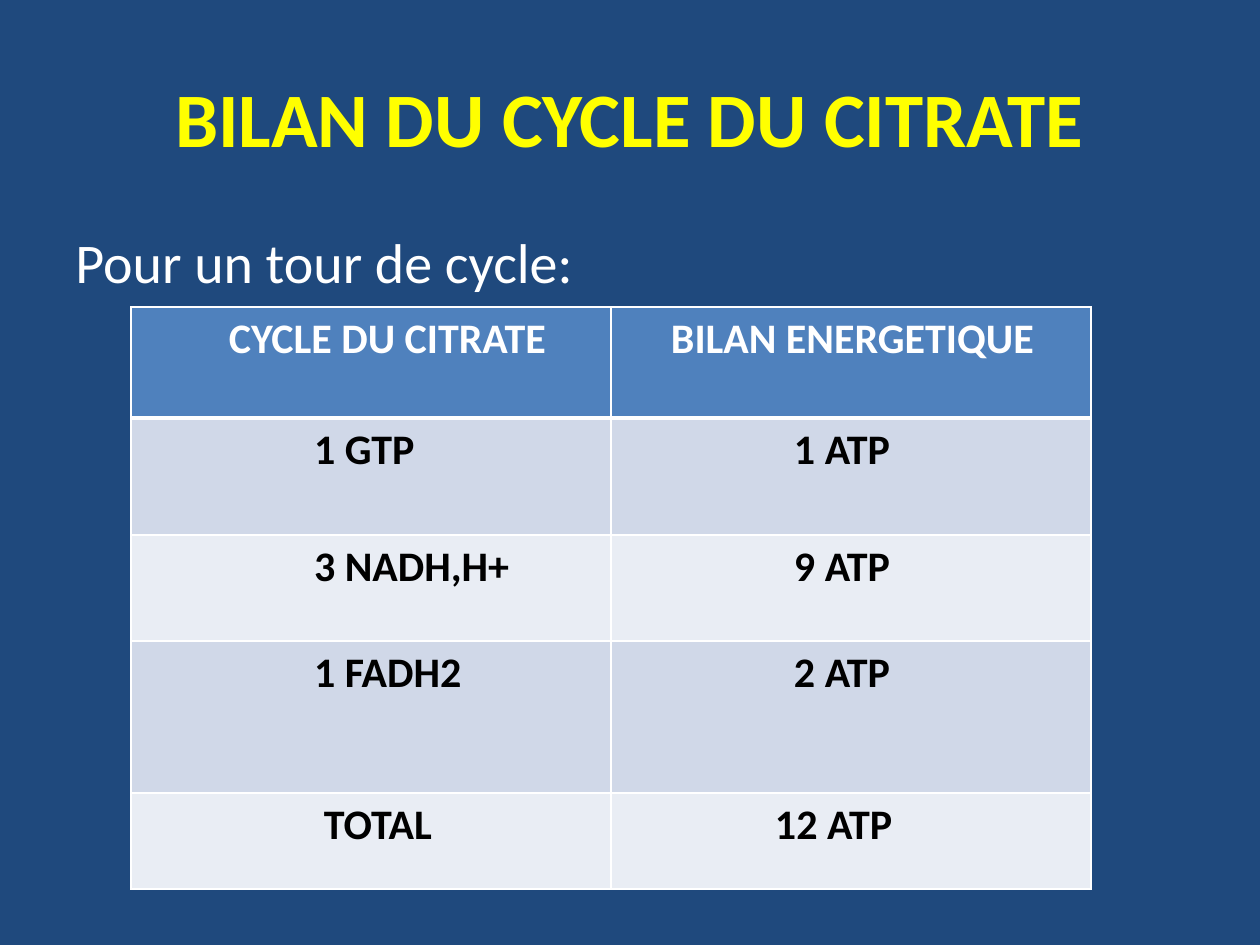
import pptx
import pptx.dml.color
import pptx.enum.text
import pptx.oxml
import pptx.oxml.ns
import pptx.util

PX = 914400 / 126
FONT = "Calibri"
TITLE = "BILAN DU CYCLE DU CITRATE"
INTRO = "Pour un tour de cycle:"
# text and left indent of each cell
ROWS = [
    (111, "4F81BD", [("CYCLE DU CITRATE", 98), ("BILAN ENERGETIQUE", 60)]),
    (117, "D0D8E8", [("1 GTP", 183), ("1 ATP", 183)]),
    (106, "E9EDF4", [("3 NADH,H+", 183), ("9 ATP", 183)]),
    (152, "D0D8E8", [("1 FADH2", 183), ("2 ATP", 183)]),
    (96, "E9EDF4", [("TOTAL", 193), ("12 ATP", 164)]),
]
COL_W = 480


def px(n):
    return pptx.util.Emu(round(n * PX))


def rgb(color):
    return pptx.dml.color.RGBColor.from_string(color)


def write(tf, text, size=24, color="000000", bold=False, align="LEFT"):
    p = tf.paragraphs[0]
    p.alignment = getattr(pptx.enum.text.PP_ALIGN, align)
    r = p.add_run()
    r.text = text
    r.font.name, r.font.size, r.font.bold = FONT, pptx.util.Pt(size), bold
    r.font.color.rgb = rgb(color)


def add_text(s, text, box, anchor="TOP", **fmt):
    tf = s.shapes.add_textbox(*map(px, box)).text_frame
    tf.word_wrap = True
    tf.vertical_anchor = getattr(pptx.enum.text.MSO_ANCHOR, anchor)
    write(tf, text, **fmt)


def set_borders(cell, widths, color="FFFFFF"):
    tc_pr = cell._tc.get_or_add_tcPr()
    for i, (side, width) in enumerate(widths.items()):
        tc_pr.insert(i, pptx.oxml.parse_xml(
            f'<a:ln{side} {pptx.oxml.ns.nsdecls("a")} w="{pptx.util.Pt(width)}">'
            f'<a:solidFill><a:srgbClr val="{color}"/></a:solidFill></a:ln{side}>'))


def add_balance(s, left, top):
    height = sum(row[0] for row in ROWS)
    table = s.shapes.add_table(len(ROWS), 2, px(left), px(top), px(2 * COL_W), px(height)).table
    for col in table.columns:
        col.width = px(COL_W)
    for i, (row_h, fill, texts) in enumerate(ROWS):
        table.rows[i].height = px(row_h)
        for j, (text, indent) in enumerate(texts):
            cell = table.cell(i, j)
            cell.margin_left = px(indent)
            cell.fill.solid()
            cell.fill.fore_color.rgb = rgb(fill)
            write(cell.text_frame, text, bold=True, color="000000" if i else "FFFFFF")
            set_borders(cell, {"L": 1, "R": 1, "T": 3 if i == 1 else 1, "B": 1 if i else 3})


def main():
    """Build the slide on the energy balance of the citrate cycle."""
    prs = pptx.Presentation()
    prs.slide_width, prs.slide_height = px(1260), px(945)
    s = prs.slides.add_slide(prs.slide_layouts[6])
    s.background.fill.solid()
    s.background.fill.fore_color.rgb = rgb("1F497D")
    add_text(s, TITLE, (63, 38, 1134, 158), anchor="MIDDLE",
             size=44, color="FFFF00", bold=True, align="CENTER")
    add_text(s, INTRO, (63, 221, 1134, 624), size=32, color="FFFFFF")
    add_balance(s, 131, 307)
    prs.save("out.pptx")


if __name__ == "__main__":
    main()
